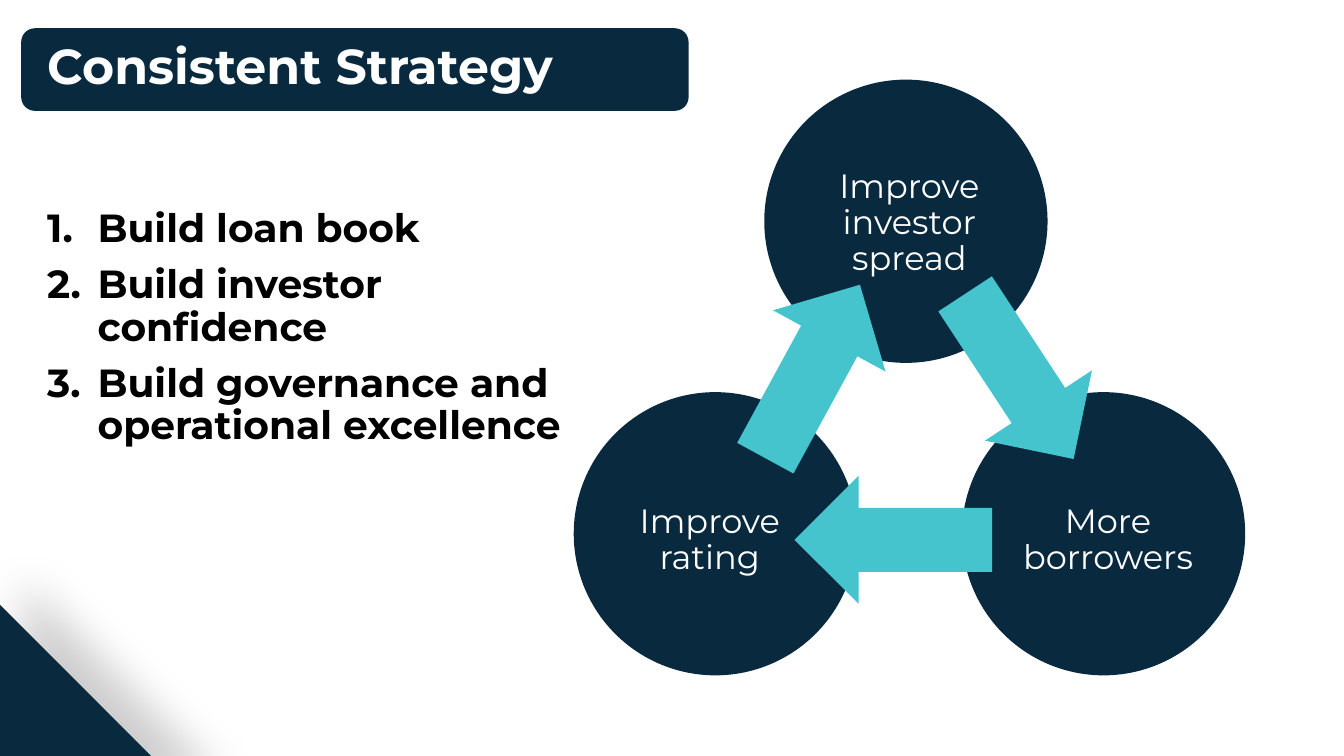
import dataclasses
import lxml.etree
import pptx
import pptx.dml.color
import pptx.enum.shapes
import pptx.enum.text
import pptx.oxml.ns
import pptx.util

Inches = pptx.util.Inches
SHAPE = pptx.enum.shapes.MSO_SHAPE
ALIGN = pptx.enum.text.PP_ALIGN
ANCHOR = pptx.enum.text.MSO_ANCHOR


@dataclasses.dataclass(frozen=True)
class Theme:
    """Colours, font and type sizes."""
    navy: str = "092A3E"
    teal: str = "45C4CD"
    rust: str = "C66A52"
    white: str = "FFFFFF"
    black: str = "000000"
    font: str = "Montserrat"
    title: int = 35
    body: int = 28
    label: int = 24


THEME = Theme()


def tint(shape, color):
    """Fill a shape with a flat colour and no outline."""
    shape.shadow.inherit = False
    shape.fill.solid()
    shape.fill.fore_color.rgb = pptx.dml.color.RGBColor.from_string(color)
    shape.line.fill.background()
    return shape


def draw(slide, kind, box, color):
    """Add a flat preset shape in a box."""
    return tint(slide.shapes.add_shape(kind, *map(Inches, box)), color)


def child(parent, tag, **attrs):
    """Append a drawing element to a parent."""
    name = pptx.oxml.ns.qn("a:" + tag)
    return lxml.etree.SubElement(parent, name, attrs)


def write(slide, text, box, *, size, color, bold=False, align=ALIGN.LEFT,
          anchor=ANCHOR.MIDDLE, number=False):
    """Add a text box with one paragraph per line of text."""
    frame = slide.shapes.add_textbox(*map(Inches, box)).text_frame
    frame.word_wrap = True
    frame.vertical_anchor = anchor
    frame.text = text
    for order, para in enumerate(frame.paragraphs):
        para.alignment = align
        para.line_spacing = 0.9
        para.space_before = pptx.util.Pt(10 if order else 0)
        if number:
            props = para._p.get_or_add_pPr()
            props.set("marL", str(Inches(0.5)))
            props.set("indent", str(Inches(-0.5)))
            child(props, "buFont", typeface="+mj-lt")
            child(props, "buAutoNum", type="arabicPeriod")
        para.font.name = THEME.font
        para.font.size = pptx.util.Pt(size)
        para.font.bold = bold
        para.font.color.rgb = pptx.dml.color.RGBColor.from_string(color)


def wedge(slide, points, color):
    """Add a triangle with a soft shadow up and to the right."""
    build = slide.shapes.build_freeform(*points[0], scale=Inches(1))
    build.add_line_segments(points[1:], close=True)
    shape = tint(build.convert_to_shape(), color)
    effects = shape._element.spPr.find(pptx.oxml.ns.qn("a:effectLst"))
    shade = child(effects, "outerShdw", blurRad=str(pptx.util.Pt(33)),
                  dist=str(pptx.util.Pt(23)), dir="18900000",
                  algn="bl", rotWithShape="0")
    child(child(shade, "srgbClr", val=THEME.black), "alpha", val="20000")


def corner(slide, box):
    """Draw the two wedges in the bottom left corner."""
    x, y, w, h = box
    wedge(slide, [(x, y), (x, y + 0.2), (x + 1.1, y + 0.68)], THEME.rust)
    wedge(slide, [(x, y + 0.25), (x, y + h), (x + w, y + h)], THEME.navy)


def header(slide, box, text):
    """Draw the title on its rounded bar."""
    x, y, w, h = box
    draw(slide, SHAPE.ROUNDED_RECTANGLE, box, THEME.navy)
    write(slide, text, (x + 0.16, y + 0.09, w - 0.32, h - 0.2),
          size=THEME.title, color=THEME.white, bold=True)


def goals(slide, box, items):
    """Write the numbered goals."""
    write(slide, "\n".join(items), box, size=THEME.body, color=THEME.black,
          bold=True, anchor=ANCHOR.TOP, number=True)


def cycle(slide, box):
    """Draw three labelled circles joined by a loop of arrows."""
    x, y, w, h = box
    disc = 2.81
    low = h - disc
    nodes = [
        ("Improve investor spread", 1.89, 0, (2.36, 0.37, 1.94, 2.12)),
        ("Improve rating", 0, low, (0.43, 3.79, 1.84, 1.57)),
        ("More borrowers", w - disc, low, (4.31, 3.56, 1.98, 2.02)),
    ]
    for text, left, top, area in nodes:
        draw(slide, SHAPE.OVAL, (x + left, y + top, disc, disc), THEME.navy)
        dx, dy, wide, high = area
        write(slide, text, (x + dx, y + dy, wide, high), size=THEME.label,
              color=THEME.white, align=ALIGN.CENTER)
    for left, top, turn in [(1.39, 2.26, 298.6), (3.44, 2.31, 56.7),
                            (2.19, 3.93, 180)]:
        arrow = draw(slide, SHAPE.RIGHT_ARROW,
                     (x + left, y + top, 1.96, 1.27), THEME.teal)
        arrow.rotation = turn


def main():
    """Build and save the strategy slide."""
    deck = pptx.Presentation()
    deck.slide_width = Inches(13.33)
    deck.slide_height = Inches(7.5)
    slide = deck.slides.add_slide(deck.slide_layouts[6])
    corner(slide, (0, 6.14, 2.49, 1.36))
    header(slide, (0.21, 0.28, 6.62, 0.82), "Consistent Strategy")
    goals(slide, (0.37, 2.02, 5.49, 3.72),
          ["Build loan book", "Build investor confidence",
           "Build governance and operational excellence"])
    cycle(slide, (5.69, 0.79, 6.66, 5.91))
    deck.save("out.pptx")


if __name__ == "__main__":
    main()
